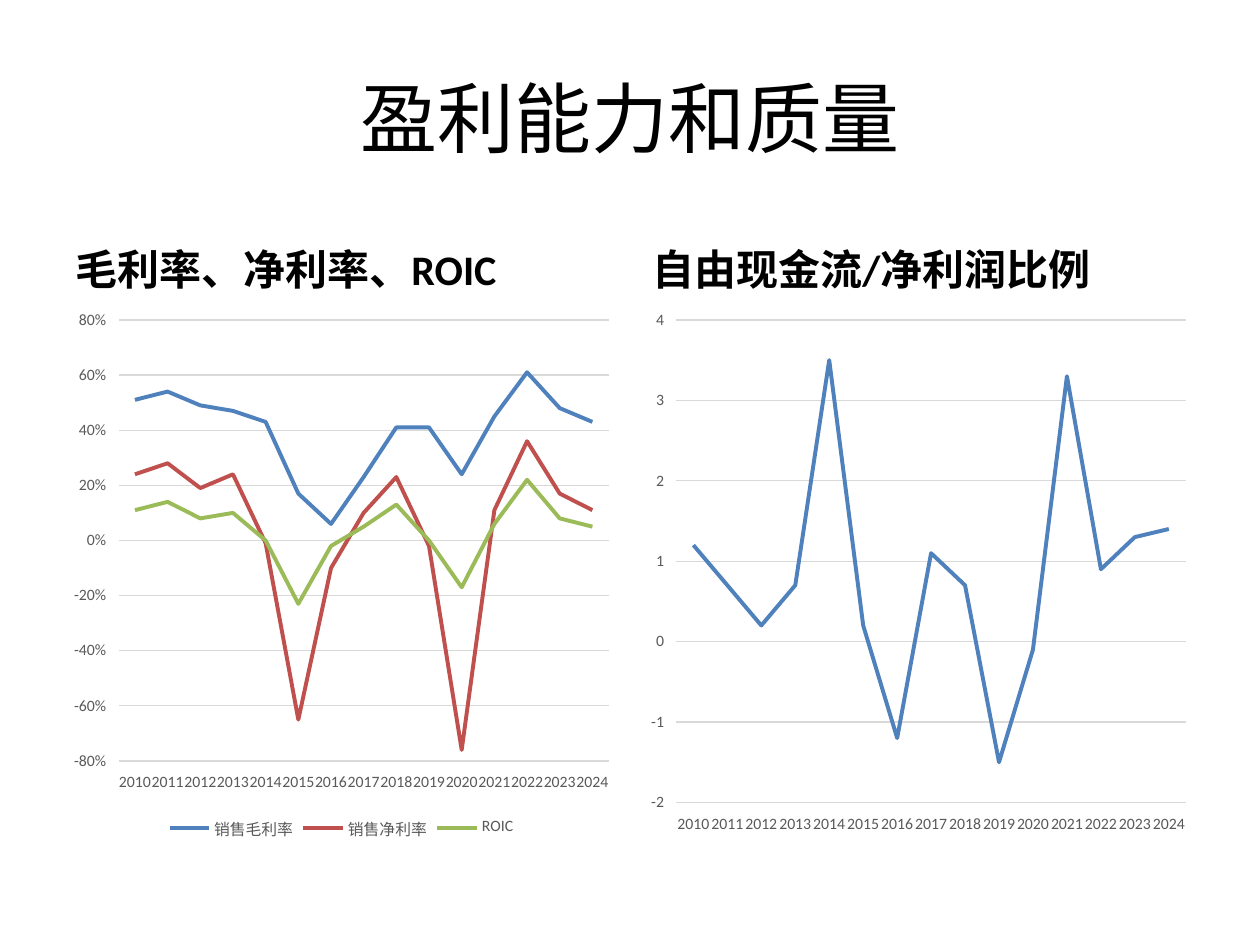
from pptx import Presentation, util as u
from pptx.chart.data import CategoryChartData
from pptx.dml.color import RGBColor
from pptx.enum import chart as ch, text as t

BLACK = RGBColor(0x00, 0x00, 0x00)
GRAY = RGBColor(0x59, 0x59, 0x59)
GRID = RGBColor(0xD9, 0xD9, 0xD9)
BLUE = RGBColor(0x4F, 0x81, 0xBD)
RED = RGBColor(0xC0, 0x50, 0x4D)
GREEN = RGBColor(0x9B, 0xBB, 0x59)
FONT = "Calibri"
YEARS = [str(year) for year in range(2010, 2025)]

MARGIN, COLUMN_WIDTH, COLUMN_STEP = 0.5, 4.42, 4.58
TOP, HEADING_HEIGHT, PANEL_HEIGHT = 1.68, 0.7, 5.02

MARGINS = [
    ("销售毛利率", BLUE, [0.51, 0.54, 0.49, 0.47, 0.43, 0.17, 0.06, 0.23,
                     0.41, 0.41, 0.24, 0.45, 0.61, 0.48, 0.43]),
    ("销售净利率", RED, [0.24, 0.28, 0.19, 0.24, -0.01, -0.65, -0.1, 0.1,
                    0.23, -0.02, -0.76, 0.11, 0.36, 0.17, 0.11]),
    ("ROIC", GREEN, [0.11, 0.14, 0.08, 0.1, 0, -0.23, -0.02, 0.05,
                     0.13, 0, -0.17, 0.06, 0.22, 0.08, 0.05]),
]
CASH_RATIO = [
    ("自由现金流/净利润比例", BLUE, [1.2, 0.7, 0.2, 0.7, 3.5, 0.2, -1.2, 1.1,
                            0.7, -1.5, -0.1, 3.3, 0.9, 1.3, 1.4]),
]
PANELS = [
    ("毛利率、净利率、ROIC", MARGINS,
     dict(low=-0.8, high=0.8, step=0.2, number_format="0%", legend=True)),
    ("自由现金流/净利润比例", CASH_RATIO,
     dict(low=-2, high=4, step=1, number_format="General", legend=False)),
]


def style_font(font, size, color, bold=False):
    """Set the typeface, size, colour and weight of a font."""
    font.name, font.size, font.bold = FONT, u.Pt(size), bold
    font.color.rgb = color


def add_text(slide, box, wording, size, bold=False,
             align=t.PP_ALIGN.LEFT, anchor=t.MSO_ANCHOR.MIDDLE):
    """Place one paragraph of text in a box given in inches."""
    frame = slide.shapes.add_textbox(*map(u.Inches, box)).text_frame
    frame.word_wrap = True
    frame.vertical_anchor = anchor
    paragraph = frame.paragraphs[0]
    paragraph.alignment = align
    run = paragraph.add_run()
    run.text = wording
    style_font(run.font, size, BLACK, bold)


def style_axis(axis):
    """Give an axis small gray labels at its low end and no ticks."""
    axis.major_tick_mark = axis.minor_tick_mark = ch.XL_TICK_MARK.NONE
    axis.tick_label_position = ch.XL_TICK_LABEL_POSITION.LOW
    style_font(axis.tick_labels.font, 9, GRAY)


def style_line(line, color, width):
    """Set the colour and the width in points of a line."""
    line.color.rgb = color
    line.width = u.Pt(width)


def add_line_chart(slide, box, series, low, high, step, number_format, legend):
    """Draw yearly series as a line chart in a box given in inches."""
    data = CategoryChartData(number_format=number_format)
    data.categories = YEARS
    for name, _, values in series:
        data.add_series(name, values)
    chart = slide.shapes.add_chart(
        ch.XL_CHART_TYPE.LINE, *map(u.Inches, box), data).chart
    style_font(chart.font, 10, BLACK)
    chart.has_title = False
    chart.has_legend = legend
    if legend:
        chart.legend.position = ch.XL_LEGEND_POSITION.BOTTOM
        chart.legend.include_in_layout = False
        style_font(chart.legend.font, 9, GRAY)

    years, scale = chart.category_axis, chart.value_axis
    style_axis(years)
    style_line(years.format.line, GRID, 0.75)
    style_axis(scale)
    scale.format.line.fill.background()
    scale.minimum_scale, scale.maximum_scale = low, high
    scale.major_unit = step
    scale.tick_labels.number_format = number_format
    scale.tick_labels.number_format_is_linked = False
    style_line(scale.major_gridlines.format.line, GRID, 0.75)

    plot = chart.plots[0]
    plot.vary_by_categories = False
    for curve, (_, color, _) in zip(plot.series, series):
        curve.smooth = False
        curve.marker.style = ch.XL_MARKER_STYLE.NONE
        style_line(curve.format.line, color, 2.25)


def add_panel(slide, box, heading, series, options):
    """Stack a bold heading on a line chart inside a box."""
    left, top, width, height = box
    add_text(slide, (left, top, width, HEADING_HEIGHT), heading, 24,
             bold=True, anchor=t.MSO_ANCHOR.BOTTOM)
    add_line_chart(
        slide, (left, top + HEADING_HEIGHT, width, height - HEADING_HEIGHT),
        series, **options)


def main():
    """Build the profitability slide and save it."""
    deck = Presentation()
    deck.slide_width, deck.slide_height = u.Inches(10), u.Inches(7.5)
    slide = deck.slides.add_slide(deck.slide_layouts[6])
    add_text(slide, (MARGIN, 0.3, 9, 1.25), "盈利能力和质量", 44,
             align=t.PP_ALIGN.CENTER)
    for column, panel in enumerate(PANELS):
        left = MARGIN + column * COLUMN_STEP
        add_panel(slide, (left, TOP, COLUMN_WIDTH, PANEL_HEIGHT), *panel)
    deck.save("out.pptx")


if __name__ == "__main__":
    main()
